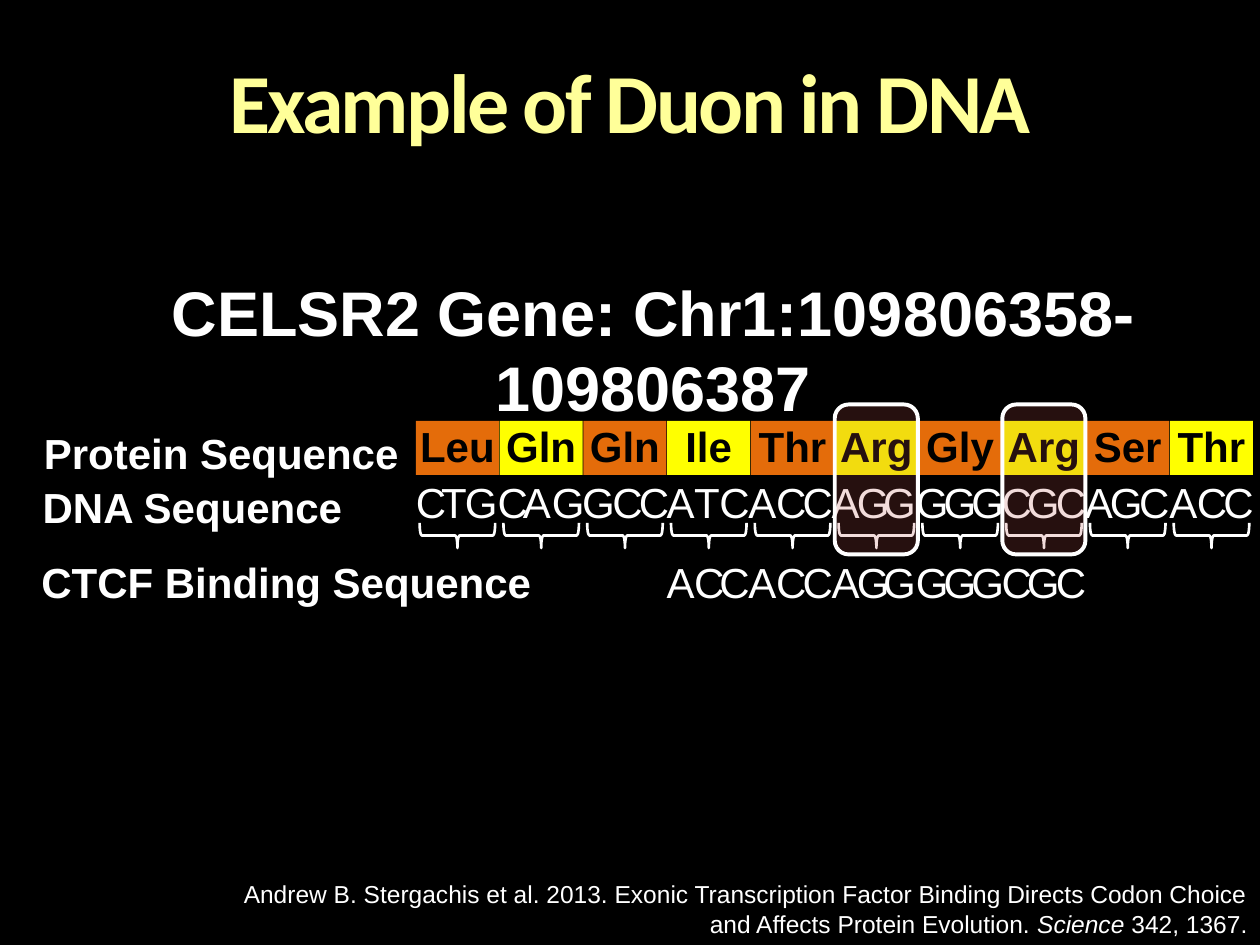
import pptx
import pptx.util
import pptx.dml.color
import pptx.enum.shapes
import pptx.enum.text
import pptx.oxml
import pptx.oxml.ns

Inches = pptx.util.Inches
Pt = pptx.util.Pt
RGBColor = pptx.dml.color.RGBColor
Shape = pptx.enum.shapes.MSO_SHAPE
Align = pptx.enum.text.PP_ALIGN
Anchor = pptx.enum.text.MSO_ANCHOR
AutoSize = pptx.enum.text.MSO_AUTO_SIZE

BLACK = RGBColor(0x00, 0x00, 0x00)
WHITE = RGBColor(0xFF, 0xFF, 0xFF)
PALE_YELLOW = RGBColor(0xFF, 0xFF, 0x99)
YELLOW = RGBColor(0xFF, 0xFF, 0x00)
ORANGE = RGBColor(0xE4, 0x6C, 0x0A)
RED = RGBColor(0xC0, 0x50, 0x4D)

AMINO_ACIDS = ["Leu", "Gln", "Gln", "Ile", "Thr", "Arg", "Gly", "Arg", "Ser", "Thr"]
DNA = "CTGCAGGCCATCACCAGGGGGCGCAGCACC"
BINDING_SITE = "ACCACCAGGGGGCGC"
BINDING_START = 9
BASE_LEFTS = [
    3.3, 3.5, 3.69, 3.95, 4.15, 4.38, 4.62, 4.86, 5.07, 5.29,
    5.51, 5.71, 5.94, 6.16, 6.37, 6.6, 6.8, 7.01, 7.27, 7.49,
    7.71, 7.95, 8.15, 8.38, 8.61, 8.81, 9.04, 9.28, 9.5, 9.71,
]
BASE_WIDTHS = {"A": 0.22, "C": 0.24, "G": 0.26, "T": 0.21}
CODON_LEFT = 3.3
CODON_RIGHT = 9.95
CODON_PITCH = (CODON_RIGHT - CODON_LEFT) / len(AMINO_ACIDS)
CODON_WIDTH = 0.66
BOUND_CODONS = [5, 7]

BODY = {"name": "Arial", "size": Pt(24), "bold": False}
STRONG = {**BODY, "bold": True}


def set_attributes(target, values):
    for name, value in values.items():
        setattr(target, name, value)


def set_margins(frame, left, top, right, bottom):
    set_attributes(frame, {
        "margin_left": Inches(left), "margin_top": Inches(top),
        "margin_right": Inches(right), "margin_bottom": Inches(bottom),
    })


def write_run(paragraph, text, font, color):
    run = paragraph.add_run()
    run.text = text
    set_attributes(run.font, font)
    run.font.color.rgb = color


def add_text(slide, box, text, font, color=WHITE, align=Align.LEFT,
             wrap=False, line_spacing=None):
    shape = slide.shapes.add_textbox(*map(Inches, box))
    set_attributes(shape.text_frame, {
        "word_wrap": wrap, "auto_size": AutoSize.SHAPE_TO_FIT_TEXT,
        "vertical_anchor": Anchor.TOP,
    })
    paragraph = shape.text_frame.paragraphs[0]
    set_attributes(paragraph, {"alignment": align, "line_spacing": line_spacing})
    write_run(paragraph, text, font, color)
    return shape


def add_shape(slide, kind, box, fill=None, line_width=None):
    shape = slide.shapes.add_shape(kind, *map(Inches, box))
    shape.shadow.inherit = False
    if fill is None:
        shape.fill.background()
    else:
        shape.fill.solid()
        shape.fill.fore_color.rgb = fill
    if line_width is None:
        shape.line.fill.background()
    else:
        shape.line.color.rgb = WHITE
        shape.line.width = Pt(line_width)
    return shape


def codon_left(index):
    return CODON_LEFT + CODON_PITCH * index


def add_title(slide):
    title = add_text(slide, (0.5, 0.3, 9, 1.25), "Example of Duon in DNA",
                     {"name": "Calibri", "size": Pt(48), "bold": True},
                     PALE_YELLOW, Align.CENTER, True)
    title.text_frame.auto_size = AutoSize.NONE
    title.text_frame.margin_top = Inches(0.09)
    run = title.text_frame.paragraphs[0].runs[0]
    run.font._element.set("spc", "-150")


def add_amino_acid(slide, index, name):
    fill = YELLOW if index % 2 else ORANGE
    box = (codon_left(index), 3.34, CODON_WIDTH, 0.43)
    shape = add_shape(slide, Shape.RECTANGLE, box, fill)
    frame = shape.text_frame
    set_margins(frame, 0.03, 0, 0.03, 0.03)
    frame.word_wrap = False
    paragraph = frame.paragraphs[0]
    paragraph.alignment = Align.CENTER
    write_run(paragraph, name, STRONG, BLACK)


def add_bases(slide, sequence, start, top):
    for base, left in zip(sequence, BASE_LEFTS[start:]):
        shape = add_text(slide, (left, top, BASE_WIDTHS[base], 0.4), base, BODY)
        set_margins(shape.text_frame, 0, 0, 0, 0)


def add_brace(slide, index):
    box = (codon_left(index) + 0.23, 3.95, 0.2, 0.6)
    brace = add_shape(slide, Shape.RIGHT_BRACE, box, line_width=1.5)
    brace.rotation = 90


def add_highlight(slide, index):
    box = (codon_left(index), 3.21, CODON_WIDTH, 1.19)
    shape = add_shape(slide, Shape.ROUNDED_RECTANGLE, box, RED, 2.25)
    color = shape._element.spPr.find(pptx.oxml.ns.qn("a:solidFill"))[0]
    color.append(pptx.oxml.parse_xml(
        f'<a:alpha {pptx.oxml.ns.nsdecls("a")} val="20000"/>'))


def add_citation(slide):
    font = {**BODY, "size": Pt(14)}
    shape = add_text(
        slide, (1.8, 6.93, 8.2, 0.57),
        "Andrew B. Stergachis et al. 2013. Exonic Transcription Factor "
        "Binding Directs Codon Choice", font, align=Align.RIGHT)
    paragraph = shape.text_frame.add_paragraph()
    paragraph.alignment = Align.RIGHT
    write_run(paragraph, "and Affects Protein Evolution. ", font, WHITE)
    write_run(paragraph, "Science ", {**font, "italic": True}, WHITE)
    write_run(paragraph, "342, 1367.", font, WHITE)


def main():
    presentation = pptx.Presentation()
    presentation.slide_width = Inches(10)
    presentation.slide_height = Inches(7.5)
    slide = presentation.slides.add_slide(presentation.slide_layouts[6])
    slide.background.fill.solid()
    slide.background.fill.fore_color.rgb = BLACK

    add_title(slide)
    add_text(slide, (0.66, 2.12, 9.05, 0.71), "CELSR2 Gene: Chr1:109806358-109806387",
             {**STRONG, "size": Pt(36)}, align=Align.CENTER, wrap=True)
    add_text(slide, (0.25, 3.3, 3.04, 0.55), "Protein Sequence", STRONG,
             line_spacing=Pt(32))
    add_text(slide, (0.24, 3.73, 2.6, 0.51), "DNA Sequence", STRONG,
             line_spacing=Pt(32))
    add_text(slide, (0.23, 4.37, 4.13, 0.5), "CTCF Binding Sequence", STRONG)

    for index, name in enumerate(AMINO_ACIDS):
        add_amino_acid(slide, index, name)
    add_bases(slide, DNA, 0, 3.78)
    add_bases(slide, BINDING_SITE, BINDING_START, 4.42)
    for index in range(len(AMINO_ACIDS)):
        add_brace(slide, index)
    for index in BOUND_CODONS:
        add_highlight(slide, index)
    add_citation(slide)
    presentation.save("out.pptx")


if __name__ == "__main__":
    main()
